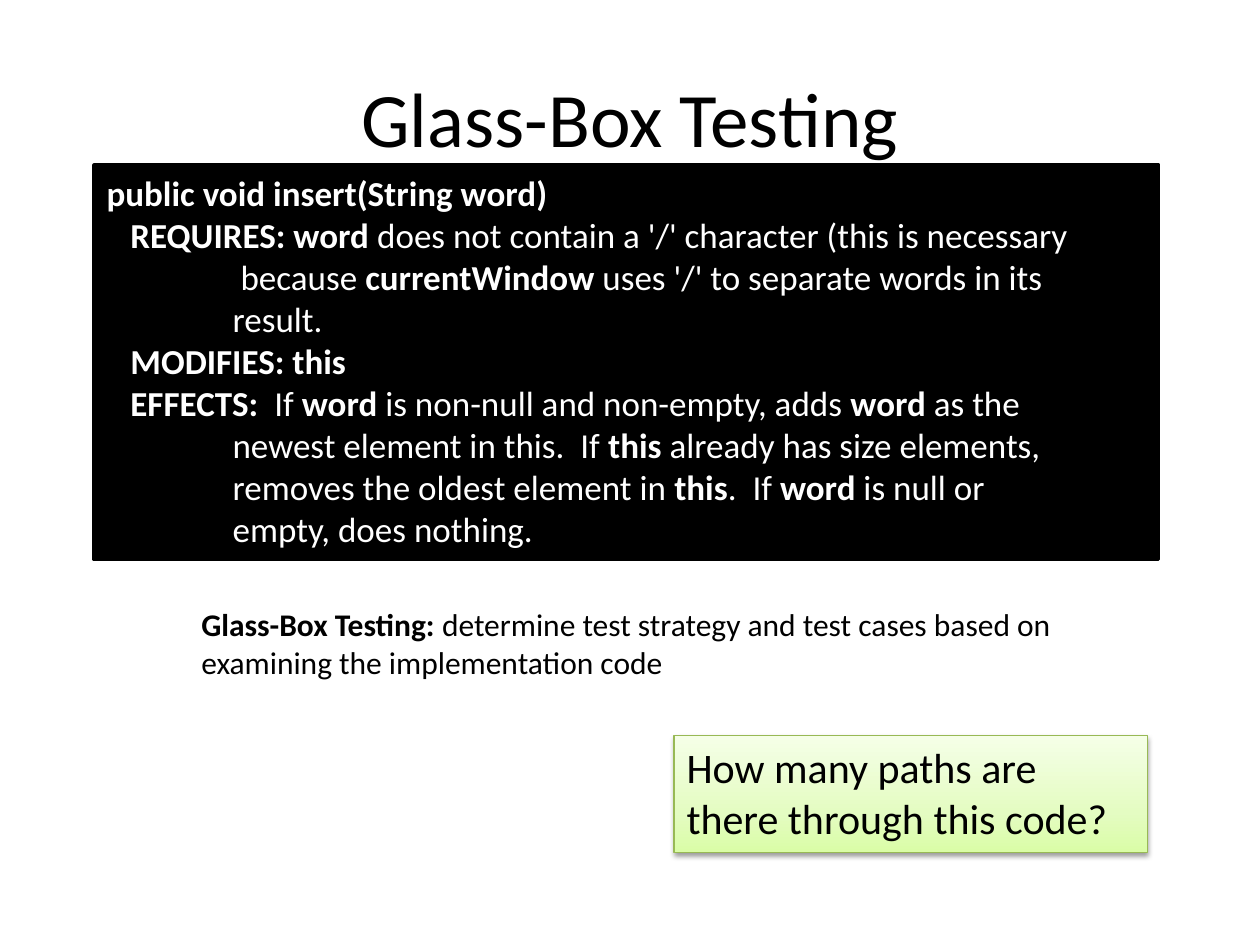
from copy import deepcopy

from lxml import etree
from pptx import Presentation
from pptx.dml.color import RGBColor
from pptx.enum.shapes import MSO_SHAPE
from pptx.enum.text import MSO_ANCHOR, PP_ALIGN
from pptx.oxml.ns import qn
from pptx.util import Cm, Pt

RECTANGLE = MSO_SHAPE.RECTANGLE
TOP, MIDDLE = MSO_ANCHOR.TOP, MSO_ANCHOR.MIDDLE
LEFT, CENTER = PP_ALIGN.LEFT, PP_ALIGN.CENTER

FONT = "Calibri"
COLORS = {"black": "000000", "white": "FFFFFF", "question_line": "98B955"}
QUESTION_STOPS = [(0, "DAFDA7"), (0.35, "E4FCC2"), (1, "F5FFE7")]

# Content: each paragraph is (indent in cm, text); ** switches bold on and off
CLAUSE, DETAIL = 0.48, 2.54
TITLE = [(0, "Glass-Box Testing")]
SPECIFICATION = [
    (0, "**public void insert(String word)**"),
    (CLAUSE, "**REQUIRES: word** does not contain a '/' character (this is necessary"),
    (DETAIL + 0.16, "because **currentWindow** uses '/' to separate words in its"),
    (DETAIL, "result."),
    (CLAUSE, "**MODIFIES: this**"),
    (CLAUSE, "**EFFECTS: ** If **word** is non-null and non-empty, adds **word** as the"),
    (DETAIL, "newest element in this.  If **this** already has size elements,"),
    (DETAIL, "removes the oldest element in **this**.  If **word** is null or"),
    (DETAIL, "empty, does nothing."),
]
DEFINITION = [
    (0, "**Glass-Box Testing:** determine test strategy and test cases "
        "based on examining the implementation code"),
]
QUESTION = [(0, "How many paths are"), (0, "there through this code?")]


def rgb(name):
    return RGBColor.from_string(COLORS[name])


def write(shape, paragraphs, size, color="black", align=LEFT, anchor=TOP):
    frame = shape.text_frame
    frame.word_wrap = True
    frame.vertical_anchor = anchor
    for i, (indent, text) in enumerate(paragraphs):
        paragraph = frame.paragraphs[0] if i == 0 else frame.add_paragraph()
        paragraph.alignment = align
        paragraph.font.name = FONT
        paragraph.font.size = Pt(size)
        paragraph.font.color.rgb = rgb(color)
        if indent:
            paragraph._p.get_or_add_pPr().set("marL", str(Cm(indent)))
        for j, part in enumerate(text.split("**")):
            if part:
                run = paragraph.add_run()
                run.text = part
                run.font.bold = j % 2 == 1


def add_box(slide, box, line_color, line_width):
    shape = slide.shapes.add_shape(RECTANGLE, *map(Cm, box))
    shape.shadow.inherit = False
    shape.line.color.rgb = rgb(line_color)
    shape.line.width = Pt(line_width)
    return shape


def fill_gradient(shape, stops, angle):
    shape.fill.gradient()
    shape.fill.gradient_angle = angle
    stop_list = shape._element.spPr.find(qn("a:gradFill")).find(qn("a:gsLst"))
    while len(stop_list) < len(stops):
        stop_list.append(deepcopy(stop_list[0]))
    for stop, (position, color) in zip(shape.fill.gradient_stops, stops):
        stop.position = position
        stop.color.rgb = RGBColor.from_string(color)


def add_shadow(shape, blur, distance, opacity):
    effects = shape._element.spPr.find(qn("a:effectLst"))
    shadow = etree.SubElement(
        effects, qn("a:outerShdw"), blurRad=str(Pt(blur)),
        dist=str(Pt(distance)), dir="5400000", rotWithShape="0")
    color = etree.SubElement(shadow, qn("a:srgbClr"), val=COLORS["black"])
    etree.SubElement(color, qn("a:alpha"), val=str(opacity * 1000))


def main():
    deck = Presentation()
    deck.slide_width, deck.slide_height = Cm(25.4), Cm(19.05)
    slide = deck.slides.add_slide(deck.slide_layouts[6])

    # Title
    title = slide.shapes.add_textbox(Cm(1.27), Cm(0.76), Cm(22.86), Cm(3.18))
    write(title, TITLE, 44, align=CENTER, anchor=MIDDLE)

    # Question with gradient and shadow
    question = add_box(slide, (13.59, 14.83, 9.55, 2.36), "question_line", 0.75)
    fill_gradient(question, QUESTION_STOPS, 90)
    add_shadow(question, 3.1, 1.6, 38)
    write(question, QUESTION, 24)

    # Method specification
    specification = add_box(slide, (1.9, 3.33, 21.46, 7.95), "black", 2)
    specification.fill.solid()
    specification.fill.fore_color.rgb = rgb("black")
    write(specification, SPECIFICATION, 20, "white")

    # Definition
    definition = slide.shapes.add_textbox(Cm(3.81), Cm(12.07), Cm(19.46), Cm(1.8))
    write(definition, DEFINITION, 18)

    deck.save("out.pptx")


if __name__ == "__main__":
    main()
